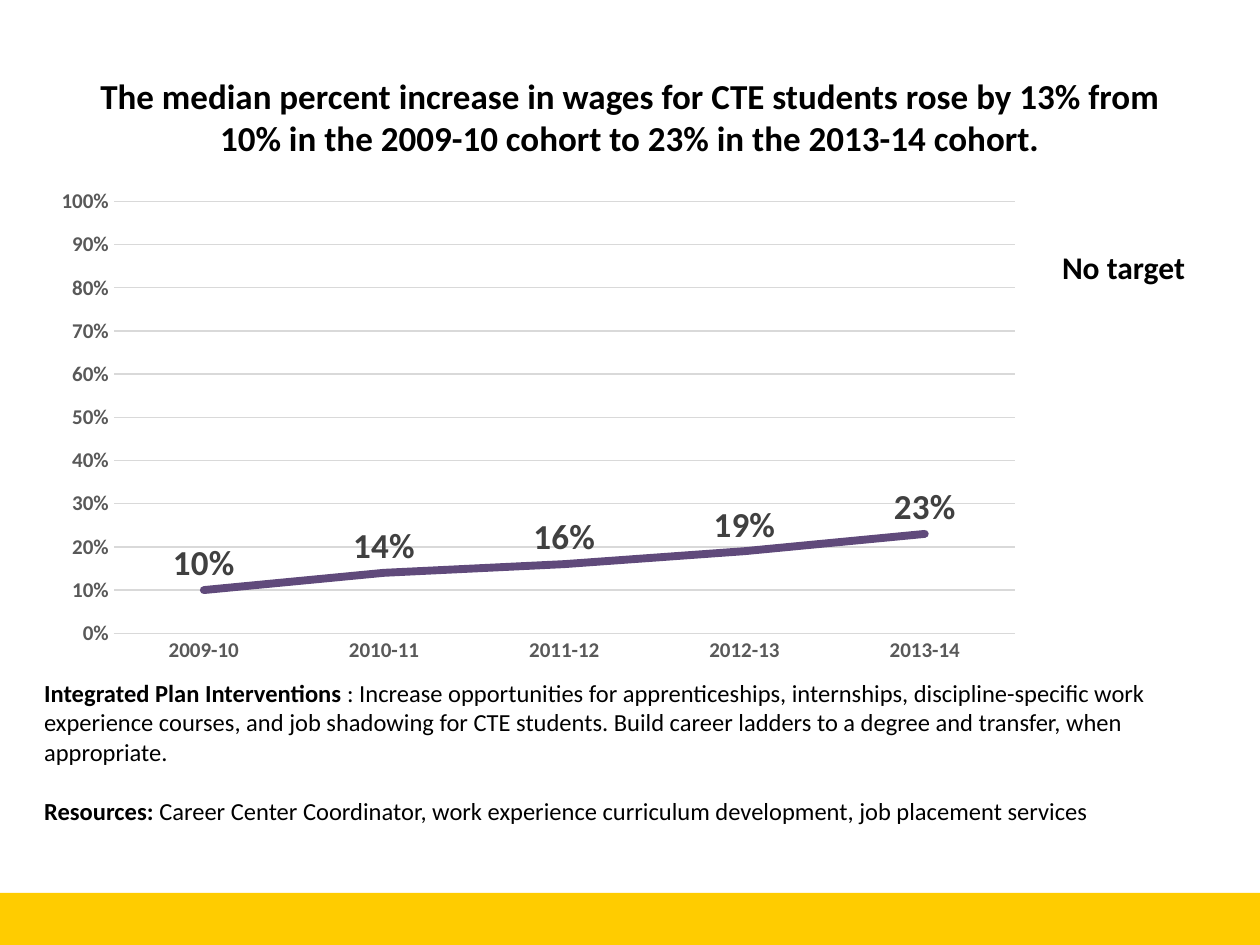
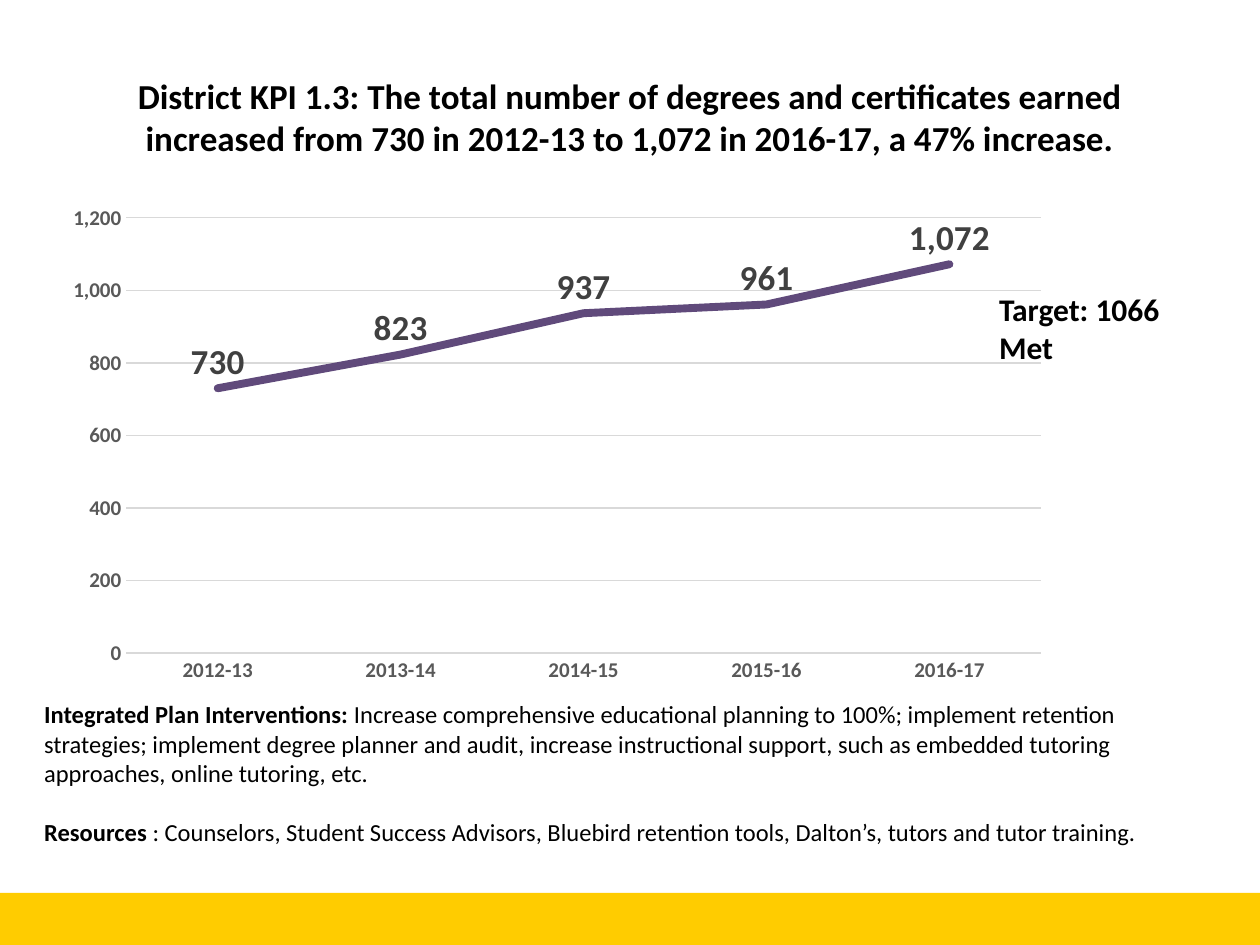
from pptx import Presentation
from pptx.chart.data import CategoryChartData
from pptx.dml.color import RGBColor
from pptx.enum.chart import XL_CHART_TYPE, XL_LABEL_POSITION, XL_MARKER_STYLE, XL_TICK_MARK
from pptx.enum.shapes import MSO_SHAPE
from pptx.enum.text import MSO_ANCHOR, MSO_AUTO_SIZE, PP_ALIGN
from pptx.util import Cm, Pt

LINE_CHART = XL_CHART_TYPE.LINE
LABEL_ABOVE = XL_LABEL_POSITION.ABOVE
NO_MARKER = XL_MARKER_STYLE.NONE
NO_TICK = XL_TICK_MARK.NONE
RECTANGLE = MSO_SHAPE.RECTANGLE
MIDDLE = MSO_ANCHOR.MIDDLE
GROW = MSO_AUTO_SIZE.SHAPE_TO_FIT_TEXT
CENTER = PP_ALIGN.CENTER

COLORS = {
    "band": "FFCC00",
    "text": "000000",
    "axis": "595959",
    "grid": "D9D9D9",
    "series": "604A7B",
    "label": "404040",
}
FONT = "Calibri"
TITLE_ONLY = 5
SLIDE_WIDTH, SLIDE_HEIGHT = 25.4, 19.05
BAND_HEIGHT = 1.05

FORMATS = {
    "title": {"size": Pt(20), "bold": True},
    "target": {"size": Pt(18), "bold": True},
    "lead": {"size": Pt(14), "bold": True},
    "body": {"size": Pt(14), "bold": False},
    "axis": {"size": Pt(12), "bold": True},
    "label": {"size": Pt(20), "bold": True},
}

PAGES = [
    {
        "title": "The median percent increase in wages for CTE students rose by 13% "
                 "from 10% in the 2009-10 cohort to 23% in the 2013-14 cohort.",
        "chart": {
            "area": (0.84, 3.61, 20.02, 9.96),
            "years": ["2009-10", "2010-11", "2011-12", "2012-13", "2013-14"],
            "values": [0.10, 0.14, 0.16, 0.19, 0.23],
            "number_format": "0%",
            "maximum": 1,
            "step": 0.1,
        },
        "plan_area": (0.64, 13.54, 23.93, 4.4),
        "plan": [
            ("Integrated Plan Interventions ",
             ": Increase opportunities for apprenticeships, internships, "
             "discipline-specific work experience courses, and job shadowing for CTE "
             "students. Build career ladders to a degree and transfer, when appropriate."),
            ("Resources: ",
             "Career Center Coordinator, work experience curriculum development, "
             "job placement services"),
        ],
        "target_area": (21.16, 4.88, 4.2, 1.02),
        "target": ["No target"],
    },
    {
        "title": "District KPI 1.3: The total number of degrees and certificates earned "
                 "increased from 730 in 2012-13 to 1,072 in 2016-17, a 47% increase.",
        "chart": {
            "area": (1.07, 3.94, 20.32, 10.03),
            "years": ["2012-13", "2013-14", "2014-15", "2015-16", "2016-17"],
            "values": [730, 823, 937, 961, 1072],
            "number_format": "#,##0",
            "maximum": 1200,
            "step": 200,
        },
        "plan_area": (0.64, 13.97, 24.13, 3.25),
        "plan": [
            ("Integrated Plan Interventions: ",
             "Increase comprehensive educational planning to 100%; implement retention "
             "strategies; implement degree planner and audit, increase instructional "
             "support, such as embedded tutoring approaches, online tutoring, etc."),
            ("Resources ",
             ": Counselors, Student Success Advisors, Bluebird retention tools, "
             "Dalton’s, tutors and tutor training."),
        ],
        "target_area": (19.89, 5.72, 5.28, 1.8),
        "target": ["Target: 1066", "Met"],
    },
]


def rgb(name):
    return RGBColor.from_string(COLORS[name])


def style_font(font, style, color="text"):
    for attribute, value in {"name": FONT, **FORMATS[style]}.items():
        setattr(font, attribute, value)
    font.color.rgb = rgb(color)


def style_line(line, color, width):
    line.color.rgb = rgb(color)
    line.width = Pt(width)


def lengths(area):
    return [Cm(value) for value in area]


def add_band(page):
    area = (0, SLIDE_HEIGHT - BAND_HEIGHT, SLIDE_WIDTH, BAND_HEIGHT)
    band = page.shapes.add_shape(RECTANGLE, *lengths(area))
    band.shadow.inherit = False
    band.fill.solid()
    band.fill.fore_color.rgb = rgb("band")
    band.line.fill.background()


def set_title(page, text):
    title = page.shapes.title
    title.left, title.top, title.width, title.height = lengths((1.27, 0.76, 22.86, 3.18))
    title.text_frame.vertical_anchor = MIDDLE
    para = title.text_frame.paragraphs[0]
    para.alignment = CENTER
    add_span(para, text, "title")


def add_span(para, text, style):
    span = para.add_run()
    span.text = text
    style_font(span.font, style)


def add_text(page, area, paragraphs, styles, gap=0):
    box = page.shapes.add_textbox(*lengths(area))
    frame = box.text_frame
    frame.word_wrap = True
    frame.auto_size = GROW
    for index, texts in enumerate(paragraphs):
        para = frame.add_paragraph() if index else frame.paragraphs[0]
        if index:
            para.space_before = Pt(gap)
        for text, style in zip(texts, styles):
            add_span(para, text, style)


def style_axes(chart, number_format, maximum, step):
    years, scale = chart.category_axis, chart.value_axis
    for axis in (years, scale):
        axis.major_tick_mark = axis.minor_tick_mark = NO_TICK
        style_font(axis.tick_labels.font, "axis", "axis")
    style_line(years.format.line, "grid", 0.75)
    scale.format.line.fill.background()
    style_line(scale.major_gridlines.format.line, "grid", 0.75)
    limits = {"minimum_scale": 0, "maximum_scale": maximum, "major_unit": step}
    for attribute, value in limits.items():
        setattr(scale, attribute, value)
    scale.tick_labels.number_format = number_format
    scale.tick_labels.number_format_is_linked = False


def style_series(series, number_format):
    series.smooth = False
    series.marker.style = NO_MARKER
    style_line(series.format.line, "series", 4.5)
    series._element.xpath("./c:spPr/a:ln")[0].set("cap", "rnd")
    labels = series.data_labels
    label_format = {
        "show_value": True,
        "position": LABEL_ABOVE,
        "number_format": number_format,
        "number_format_is_linked": False,
    }
    for attribute, value in label_format.items():
        setattr(labels, attribute, value)
    style_font(labels.font, "label", "label")


def add_trend_chart(page, area, years, values, number_format, maximum, step):
    data = CategoryChartData(number_format=number_format)
    data.categories = years
    data.add_series("Series 1", values)
    chart = page.shapes.add_chart(LINE_CHART, *lengths(area), data).chart
    chart.has_title = False
    chart.has_legend = False
    chart.font.name = FONT
    chart.font.size = Pt(10)
    chart.plots[0].vary_by_categories = False
    style_axes(chart, number_format, maximum, step)
    style_series(chart.plots[0].series[0], number_format)


def add_page(deck, content):
    page = deck.slides.add_slide(deck.slide_layouts[TITLE_ONLY])
    add_band(page)
    set_title(page, content["title"])
    add_trend_chart(page, **content["chart"])
    add_text(page, content["plan_area"], content["plan"], ("lead", "body"), gap=17)
    target_lines = [(line,) for line in content["target"]]
    add_text(page, content["target_area"], target_lines, ("target",))


def main():
    deck = Presentation()
    deck.slide_width, deck.slide_height = Cm(SLIDE_WIDTH), Cm(SLIDE_HEIGHT)
    for content in PAGES:
        add_page(deck, content)
    deck.save("out.pptx")


if __name__ == "__main__":
    main()
